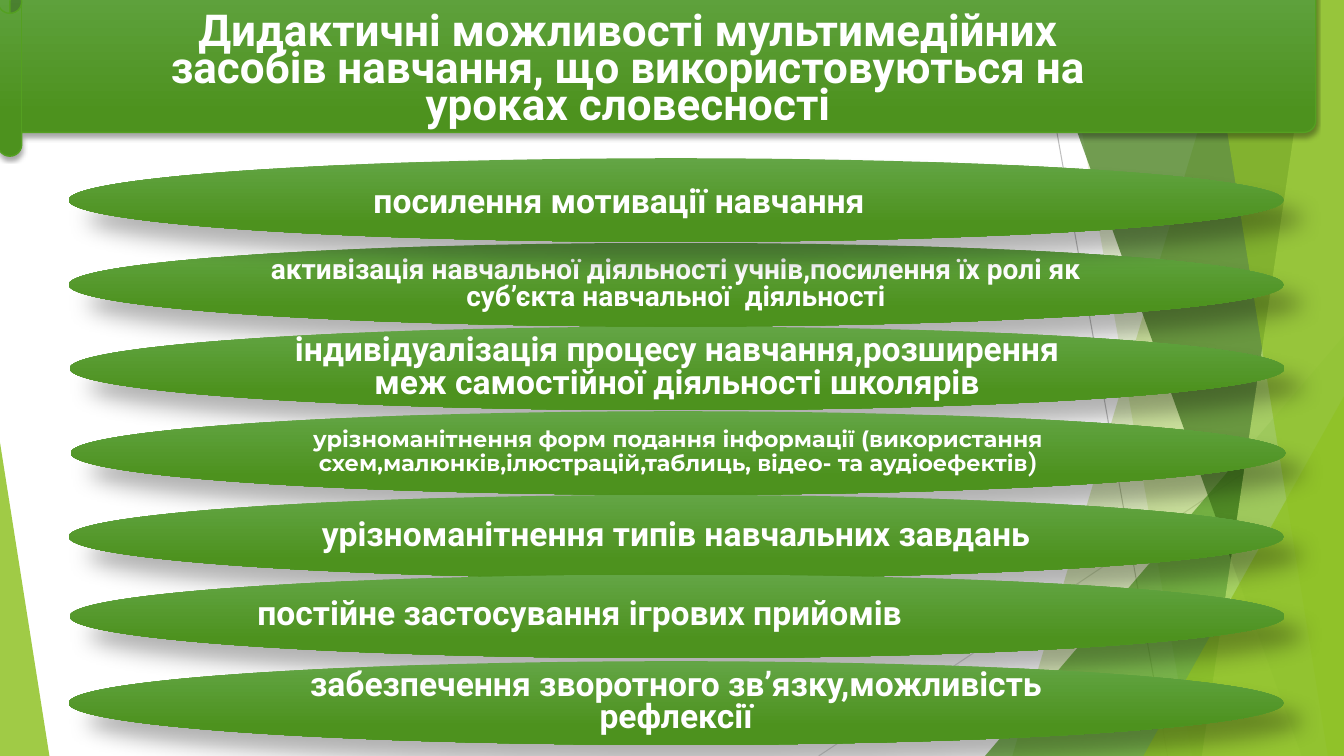
from dataclasses import dataclass

from pptx import Presentation
from pptx import util as u
from pptx.dml.color import RGBColor
from pptx.enum import shapes, text
from pptx.oxml import ns, parse_xml

WHITE = RGBColor(0xFF, 0xFF, 0xFF)
BLACK = RGBColor(0x00, 0x00, 0x00)
LIME = RGBColor(0x90, 0xC2, 0x26)
PALE_LIME = RGBColor(0xC0, 0xE4, 0x74)
GREEN = RGBColor(0x54, 0xA0, 0x21)
DARK_GREEN = RGBColor(0x3F, 0x78, 0x19)
GRADIENT_TOP = RGBColor(0x63, 0xA5, 0x45)
GRADIENT_BOTTOM = RGBColor(0x4D, 0x92, 0x1E)
GREY = RGBColor(0xBF, 0xBF, 0xBF)
LIGHT_GREY = RGBColor(0xD9, 0xD9, 0xD9)

WIDTH, HEIGHT = 13.33, 7.5
FACET_TOP = -0.01
CENTER, LEFT = text.PP_ALIGN.CENTER, text.PP_ALIGN.LEFT


@dataclass
class Ray:
    start: tuple[float, float]
    end: tuple[float, float]
    color: RGBColor


@dataclass
class Facet:
    top_x: float
    bottom_x: float
    color: RGBColor
    alpha: int


@dataclass
class Triangle:
    left: float
    top: float
    width: float
    apex: float
    color: RGBColor
    alpha: int


@dataclass
class Shadow:
    alpha: int
    blur: float
    distance: float
    angle: int


@dataclass
class Run:
    words: str
    size: float = 24
    font: str = "Roboto"


@dataclass
class Benefit:
    left: float
    top: float
    runs: list[Run]
    align: text.PP_ALIGN = CENTER
    spacing: float = 0.8
    indent: float = 0


RAYS = [
    Ray((10.25, 0), (11.58, HEIGHT), GREY),
    Ray((WIDTH, 4.03), (8.12, HEIGHT), LIGHT_GREY),
]
BACKDROP = [
    Facet(12.27, 10.04, LIME, 30),
    Facet(10.5, 11.82, LIME, 20),
    Triangle(9.77, 3.33, 3.56, 1, GREEN, 72),
    Facet(10.21, 12.91, DARK_GREEN, 70),
    Facet(13.03, 11.92, PALE_LIME, 70),
    Facet(11.96, 13.17, LIME, 65),
    Triangle(11.34, 3.93, 1.99, 1, LIME, 80),
    Triangle(0, 4.39, 0.49, 0, LIME, 85),
]
TITLE = Run("Дидактичні можливості мультимедійних засобів навчання, "
            "що використовуються на уроках словесності", 31.4)
BENEFITS = [
    Benefit(0.68, 2.41, [Run("активізація навчальної діяльності учнів,посилення "
                             "їх ролі як суб’єкта навчальної  діяльності", 20)]),
    Benefit(0.69, 3.24, [Run("індивідуалізація процесу навчання,розширення "
                             "меж самостійної діяльності школярів")]),
    Benefit(0.7, 4.08, [Run("урізноманітнення форм подання інформації (використання "
                            "схем,малюнків,ілюстрацій,таблиць, відео- та аудіоефектів",
                            16, "Montserrat"),
                        Run(")", 18)]),
    Benefit(0.68, 4.91, [Run("урізноманітнення типів навчальних завдань")]),
    Benefit(0.69, 5.7, [Run("постійне застосування ігрових прийомів")], LEFT),
    Benefit(0.68, 6.56, [Run("забезпечення зворотного зв’язку,можливість рефлексії")]),
    Benefit(0.68, 1.57, [Run("посилення мотивації навчання")], LEFT, 1.0, 1.16),
]
SCROLL_SHADOW = Shadow(35, 3, 2, 90)
BENEFIT_SHADOW = Shadow(30, 15, 18, 45)


def inches(*values: float) -> list[u.Length]:
    return [u.Inches(v) for v in values]


def apply(target, formats: dict) -> None:
    for name, value in formats.items():
        setattr(target, name, value)


def alpha_xml(percent: int) -> str:
    return f'<a:alpha {ns.nsdecls("a")} val="{percent * 1000}"/>'


def draw_ray(s, ray: Ray) -> None:
    line = s.shapes.add_connector(shapes.MSO_CONNECTOR.STRAIGHT,
                                  *inches(*ray.start, *ray.end))
    line.line.color.rgb = ray.color
    line.line.width = u.Pt(0.75)
    line.element.spPr.append(parse_xml(f'<a:effectLst {ns.nsdecls("a")}/>'))


def draw_backdrop(s, part: Facet | Triangle) -> None:
    if isinstance(part, Facet):
        builder = s.shapes.build_freeform(*inches(part.top_x, FACET_TOP))
        corners = [(WIDTH, FACET_TOP), (WIDTH, HEIGHT), (part.bottom_x, HEIGHT)]
        builder.add_line_segments([inches(*c) for c in corners], close=True)
        sp = builder.convert_to_shape()
    else:
        sp = s.shapes.add_shape(
            shapes.MSO_SHAPE.ISOSCELES_TRIANGLE,
            *inches(part.left, part.top, part.width, HEIGHT - part.top))
        sp.adjustments[0] = part.apex
    sp.shadow.inherit = False
    sp.line.fill.background()
    sp.fill.solid()
    sp.fill.fore_color.rgb = part.color
    rgb = sp.element.spPr.find(f'{ns.qn("a:solidFill")}/{ns.qn("a:srgbClr")}')
    rgb.append(parse_xml(alpha_xml(part.alpha)))


def add_glossy(s, kind: shapes.MSO_SHAPE, box: tuple, shadow: Shadow):
    sp = s.shapes.add_shape(kind, *inches(*box))
    sp.fill.gradient()
    sp.fill.gradient_angle = 270
    stops = [(0, GRADIENT_TOP), (0.78, GRADIENT_BOTTOM)]
    for stop, (position, rgb) in zip(sp.fill.gradient_stops, stops):
        stop.position = position
        stop.color.rgb = rgb
    sp.line.fill.background()
    sp.shadow.inherit = False
    sp.element.spPr.find(ns.qn("a:effectLst")).append(parse_xml(
        f'<a:outerShdw {ns.nsdecls("a")} blurRad="{u.Pt(shadow.blur)}" '
        f'dist="{u.Pt(shadow.distance)}" dir="{shadow.angle * 60000}" '
        f'algn="tl" rotWithShape="0"><a:srgbClr val="{BLACK}">'
        f'{alpha_xml(shadow.alpha)}</a:srgbClr></a:outerShdw>'))
    return sp


def write(tf, runs: list[Run], align: text.PP_ALIGN, spacing: float) -> None:
    tf.word_wrap = True
    p = tf.paragraphs[0]
    apply(p, {"alignment": align, "line_spacing": spacing})
    for run in runs:
        r = p.add_run()
        r.text = run.words
        apply(r.font, {"name": run.font, "size": u.Pt(run.size), "bold": True})
        r.font.color.rgb = WHITE


def draw_header(s) -> None:
    scroll = add_glossy(s, shapes.MSO_SHAPE.HORIZONTAL_SCROLL,
                        (-0.02, -0.34, 13.07, 1.89), SCROLL_SHADOW)
    scroll.line.color.rgb = GREEN
    scroll.line.width = u.Pt(1)
    title = s.shapes.add_textbox(*inches(1.23, 0.12, 10, 1.27))
    write(title.text_frame, [TITLE], CENTER, 0.7)


def draw_benefit(s, benefit: Benefit) -> None:
    sp = add_glossy(s, shapes.MSO_SHAPE.OVAL,
                    (benefit.left, benefit.top, 12.05, 0.83), BENEFIT_SHADOW)
    tf = sp.text_frame
    apply(tf, {"vertical_anchor": text.MSO_ANCHOR.MIDDLE,
               "margin_left": u.Inches(0.1 + benefit.indent)})
    write(tf, benefit.runs, benefit.align, benefit.spacing)


def main() -> None:
    prs = Presentation()
    prs.slide_width, prs.slide_height = inches(WIDTH, HEIGHT)
    s = prs.slides.add_slide(prs.slide_layouts[6])
    for ray in RAYS:
        draw_ray(s, ray)
    for part in BACKDROP:
        draw_backdrop(s, part)
    draw_header(s)
    for benefit in BENEFITS:
        draw_benefit(s, benefit)
    prs.save("out.pptx")


if __name__ == "__main__":
    main()
